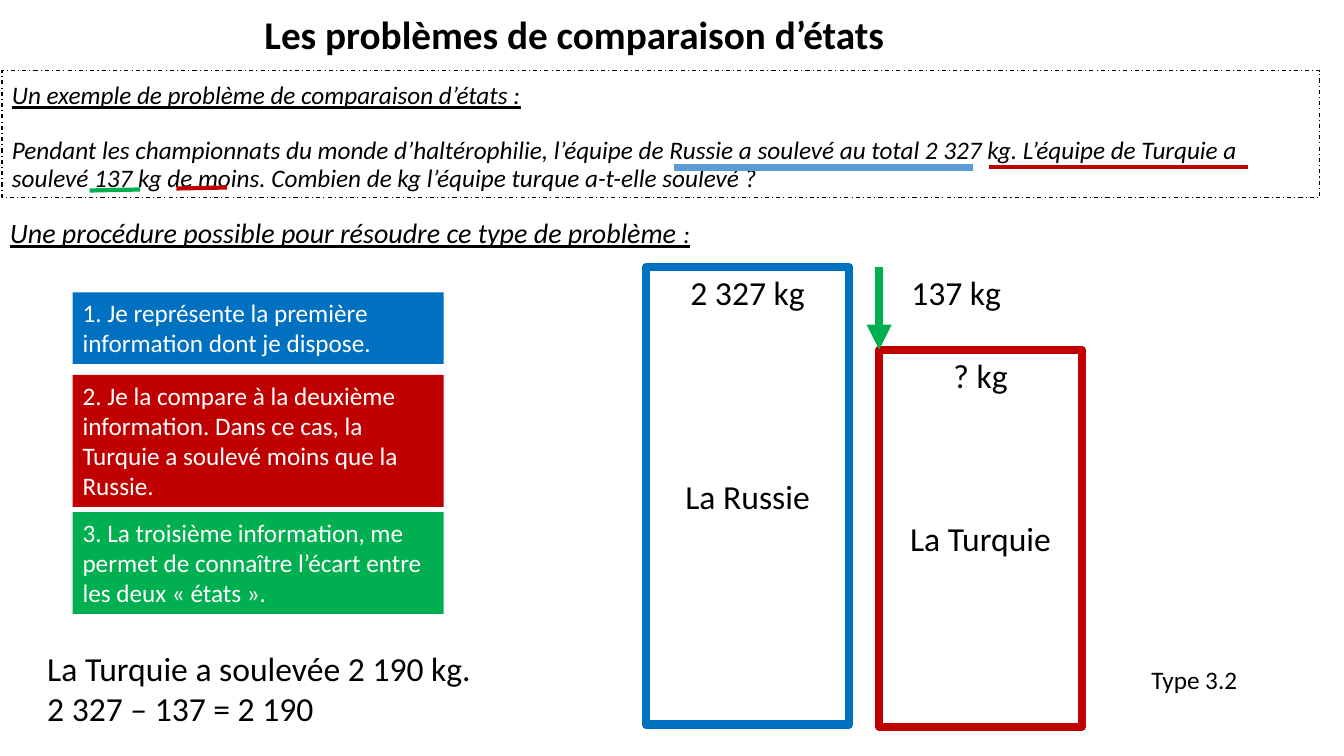
from dataclasses import dataclass

from lxml import etree
from pptx import Presentation
from pptx import util as u
from pptx.dml.color import RGBColor
from pptx.enum import dml, shapes, text
from pptx.oxml.ns import qn

PX = 9144  # 100 px to the inch
FONT = "Calibri"
BLACK = RGBColor(0x00, 0x00, 0x00)
WHITE = RGBColor(0xFF, 0xFF, 0xFF)
BLUE = RGBColor(0x00, 0x70, 0xC0)
LIGHT_BLUE = RGBColor(0x5B, 0x9B, 0xD5)
RED = RGBColor(0xC0, 0x00, 0x00)
GREEN = RGBColor(0x00, 0xB0, 0x50)
CENTER = text.PP_ALIGN.CENTER


@dataclass(frozen=True)
class Box:
    left: int
    top: int
    width: int
    height: int

    def emu(self) -> list[int]:
        return [n * PX for n in (self.left, self.top, self.width, self.height)]


@dataclass(frozen=True)
class Para:
    text: str
    size: int = 24
    color: RGBColor = BLACK
    bold: bool = False
    italic: bool = False
    underline: bool = False
    align: text.PP_ALIGN = text.PP_ALIGN.LEFT
    before: int = 0
    spacing: float = 1.0


@dataclass(frozen=True)
class Step:
    box: Box
    color: RGBColor
    text: str


@dataclass(frozen=True)
class Bar:
    box: Box
    color: RGBColor
    amount: str
    team: str
    gap: int


@dataclass(frozen=True)
class Stroke:
    x1: int
    y1: int
    x2: int
    y2: int
    color: RGBColor
    weight: int
    arrow: bool = False


STEPS = [
    Step(Box(72, 290, 368, 71), BLUE,
         "1. Je représente la première information dont je dispose."),
    Step(Box(72, 372, 368, 131), RED,
         "2. Je la compare à la deuxième information. Dans ce cas, la Turquie "
         "a soulevé moins que la Russie."),
    Step(Box(72, 508, 368, 101), GREEN,
         "3. La troisième information, me permet de connaître l’écart entre "
         "les deux « états »."),
]
BARS = [
    Bar(Box(641, 265, 201, 454), BLUE, "2 327 kg", "La Russie", 117),
    Bar(Box(872, 347, 201, 374), RED, "? kg", "La Turquie", 88),
]
STROKES = [
    Stroke(872, 265, 872, 347, GREEN, 6, arrow=True),
    Stroke(668, 166, 965, 166, LIGHT_BLUE, 5),
    Stroke(981, 166, 1238, 166, RED, 3),
    Stroke(175, 187, 225, 186, RED, 3),
    Stroke(89, 189, 139, 188, GREEN, 3),
]
PROBLEM = [
    Para("Un exemple de problème de comparaison d’états :", 18,
         italic=True, underline=True, spacing=0.9),
    Para("Pendant les championnats du monde d’haltérophilie, l’équipe de Russie "
         "a soulevé au total 2 327 kg. L’équipe de Turquie a soulevé 137 kg de "
         "moins. Combien de kg l’équipe turque a-t-elle soulevé ?", 18,
         italic=True, before=20, spacing=0.9),
]
NOTES = [
    (Box(894, 265, 119, 50), [Para("137 kg")]),
    (Box(37, 638, 575, 91),
     [Para("La Turquie a soulevée 2 190 kg."), Para("2 327 – 137 = 2 190")]),
    (Box(1132, 654, 121, 40), [Para("Type 3.2", 18)]),
]


def write(sp, paras: list[Para], anchor=text.MSO_ANCHOR.TOP) -> None:
    tf = sp.text_frame
    tf.word_wrap = True
    tf.auto_size = text.MSO_AUTO_SIZE.NONE
    tf.vertical_anchor = anchor
    for i, para in enumerate(paras):
        p = tf.add_paragraph() if i else tf.paragraphs[0]
        p.add_run().text = para.text
        p.alignment = para.align
        p.space_before = u.Pt(para.before)
        p.line_spacing = para.spacing
        f = p.font
        f.name, f.size = FONT, u.Pt(para.size)
        f.bold, f.italic, f.underline = para.bold, para.italic, para.underline
        f.color.rgb = para.color


def add_text(slide, box: Box, paras: list[Para], **options):
    sp = slide.shapes.add_textbox(*box.emu())
    write(sp, paras, **options)
    return sp


def add_rect(slide, box: Box):
    sp = slide.shapes.add_shape(shapes.MSO_SHAPE.RECTANGLE, *box.emu())
    sp.shadow.inherit = False
    return sp


def add_step(slide, step: Step) -> None:
    sp = add_rect(slide, step.box)
    sp.fill.solid()
    sp.fill.fore_color.rgb = step.color
    sp.line.fill.background()
    write(sp, [Para(step.text, 18, WHITE)])


def add_bar(slide, bar: Bar) -> None:
    sp = add_rect(slide, bar.box)
    sp.fill.background()
    sp.line.color.rgb = bar.color
    sp.line.width = u.Pt(6)
    etree.SubElement(sp.line._get_or_add_ln(), qn("a:round"))
    write(sp, [Para(bar.amount, align=CENTER),
               Para(bar.team, align=CENTER, before=bar.gap)])


def add_stroke(slide, stroke: Stroke) -> None:
    ends = [n * PX for n in (stroke.x1, stroke.y1, stroke.x2, stroke.y2)]
    line = slide.shapes.add_connector(shapes.MSO_CONNECTOR.STRAIGHT, *ends)
    line.line.color.rgb = stroke.color
    line.line.width = u.Pt(stroke.weight)
    if stroke.arrow:
        etree.SubElement(line.line._get_or_add_ln(), qn("a:tailEnd"), type="triangle")
    etree.SubElement(line._element.spPr, qn("a:effectLst"))


def main() -> None:
    prs = Presentation()
    prs.slide_width, prs.slide_height = 1333 * PX, 750 * PX
    slide = prs.slides.add_slide(prs.slide_layouts.get_by_name("Title Only"))

    title = slide.shapes.title
    title.left, title.top, title.width, title.height = Box(2, 5, 1135, 52).emu()
    write(title, [Para("Les problèmes de comparaison d’états", 28,
                       bold=True, align=CENTER)])

    problem = add_text(slide, Box(2, 70, 1307, 126), PROBLEM,
                       anchor=text.MSO_ANCHOR.BOTTOM)
    problem.line.color.rgb = BLACK
    problem.line.width = u.Pt(0.75)
    problem.line.dash_style = dml.MSO_LINE.DASH_DOT

    heading = add_text(slide, Box(0, 209, 737, 40), [
        Para("Une procédure possible pour résoudre ce type de problème ", 20,
             italic=True, underline=True)])
    r = heading.text_frame.paragraphs[0].add_run()
    r.text = ":"
    r.font.size = u.Pt(18)

    for step in STEPS:
        add_step(slide, step)
    for bar in BARS:
        add_bar(slide, bar)
    for box, paras in NOTES:
        add_text(slide, box, paras)
    for stroke in STROKES:
        add_stroke(slide, stroke)
    prs.save("out.pptx")


if __name__ == "__main__":
    main()
